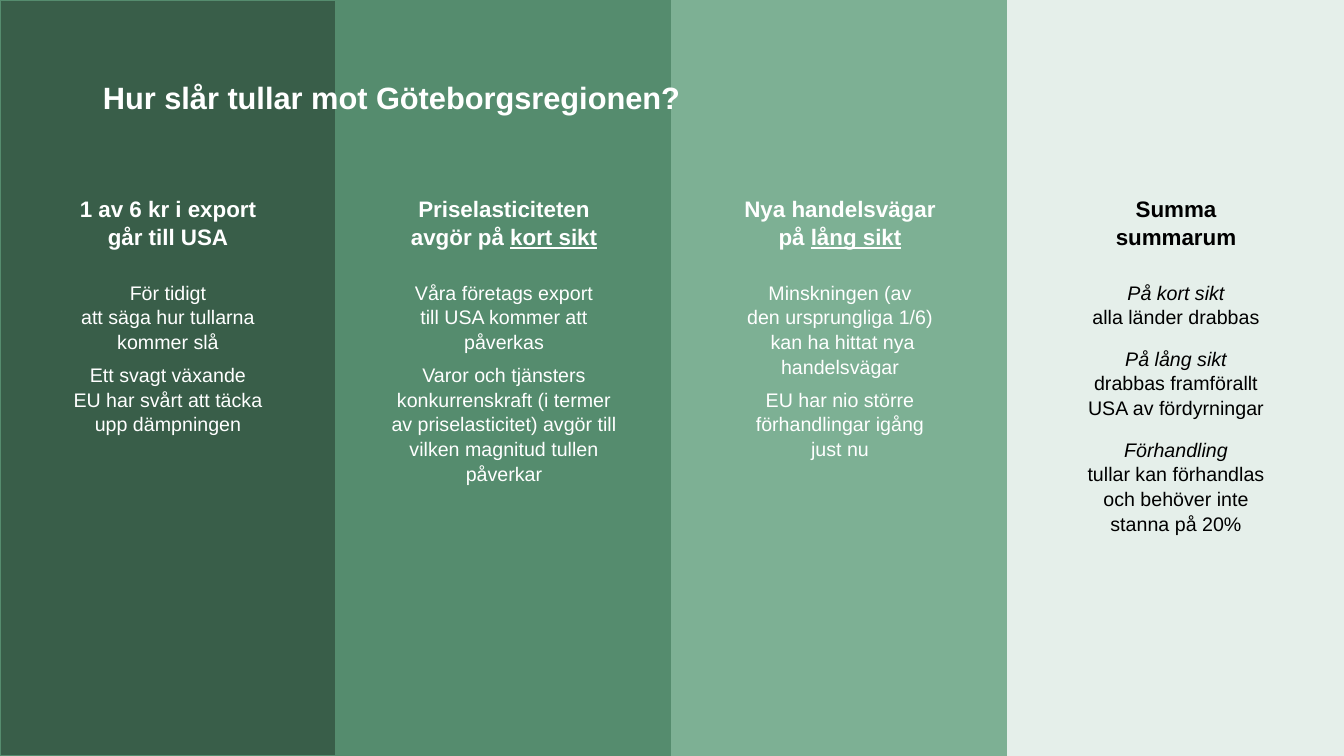
from pptx import Presentation
from pptx.dml.color import RGBColor
from pptx.enum.shapes import MSO_SHAPE
from pptx.enum.text import MSO_ANCHOR, PP_ALIGN
from pptx.util import Inches, Pt

COLORS = {
    "forest": "395E49", "green": "558C6E", "sage": "7DB094",
    "mist": "E5EFEA", "white": "FFFFFF", "black": "000000",
}


def rgb(name):
    return RGBColor.from_string(COLORS[name])


def style(p, size, color, bold=False, italic=False, after=0):
    p.alignment = PP_ALIGN.CENTER
    p.line_spacing = 1.05
    p.space_after = Pt(after)
    p.font.name = "Arial"
    p.font.size = Pt(size)
    p.font.bold = bold
    p.font.italic = italic
    p.font.color.rgb = rgb(color)


columns = [
    ("forest", "green", "white", "1 av 6 kr i export\vgår till USA", "", [
        ("För tidigt\vatt säga hur tullarna\vkommer slå", False, 6),
        ("Ett svagt växande\vEU har svårt att täcka\vupp dämpningen", False, 0),
    ]),
    ("green", "green", "white", "Priselasticiteten\vavgör på ", "kort sikt", [
        ("Våra företags export\vtill USA kommer att\vpåverkas", False, 6),
        ("Varor och tjänsters\vkonkurrenskraft (i termer\vav priselasticitet) avgör till\v"
         "vilken magnitud tullen\vpåverkar", False, 0),
    ]),
    ("sage", "sage", "white", "Nya handelsvägar\vpå ", "lång sikt", [
        ("Minskningen (av\vden ursprungliga 1/6)\v kan ha hittat nya\vhandelsvägar", False, 6),
        ("EU har nio större\vförhandlingar igång\vjust nu", False, 0),
    ]),
    ("mist", "mist", "black", "Summa\vsummarum", "", [
        ("På kort sikt", True, 0),
        ("alla länder drabbas", False, 12),
        ("På lång sikt", True, 0),
        ("drabbas framförallt\vUSA av fördyrningar", False, 12),
        ("Förhandling", True, 0),
        ("tullar kan förhandlas\voch behöver inte\vstanna på 20%", False, 0),
    ]),
]

prs = Presentation()
prs.slide_width = Inches(13.33)
prs.slide_height = Inches(7.5)
s = prs.slides.add_slide(prs.slide_layouts[5])
s.background.fill.solid()
s.background.fill.fore_color.rgb = rgb("mist")

col_w = prs.slide_width // len(columns)
for i, (fill, line, ink, heading, underlined, body) in enumerate(columns):
    sp = s.shapes.add_shape(MSO_SHAPE.RECTANGLE, i * col_w, 0, col_w, prs.slide_height)
    sp.shadow.inherit = False
    sp.fill.solid()
    sp.fill.fore_color.rgb = rgb(fill)
    sp.line.color.rgb = rgb(line)
    sp.line.width = Pt(1)
    tf = sp.text_frame
    tf.word_wrap = True
    tf.vertical_anchor = MSO_ANCHOR.TOP
    tf.margin_top = Inches(1.92)
    p = tf.paragraphs[0]
    p.text = heading
    if underlined:
        r = p.add_run()
        r.text = underlined
        r.font.underline = True
    style(p, 16, ink, bold=True, after=21)
    for text, italic, after in body:
        p = tf.add_paragraph()
        p.text = text
        style(p, 14, ink, italic=italic, after=after)

title = s.shapes.title
title.left, title.top = Inches(0.92), Inches(0.4)
title.width, title.height = Inches(6.61), Inches(0.8)
tf = title.text_frame
tf.vertical_anchor = MSO_ANCHOR.BOTTOM
p = tf.paragraphs[0]
p.text = "Hur slår tullar mot Göteborgsregionen?"
p.alignment = PP_ALIGN.LEFT
p.line_spacing = Pt(31)
p.font.name = "Arial"
p.font.size = Pt(22)
p.font.bold = True
p.font.color.rgb = rgb("white")
s.shapes._spTree.append(title._element)

prs.save("out.pptx")
